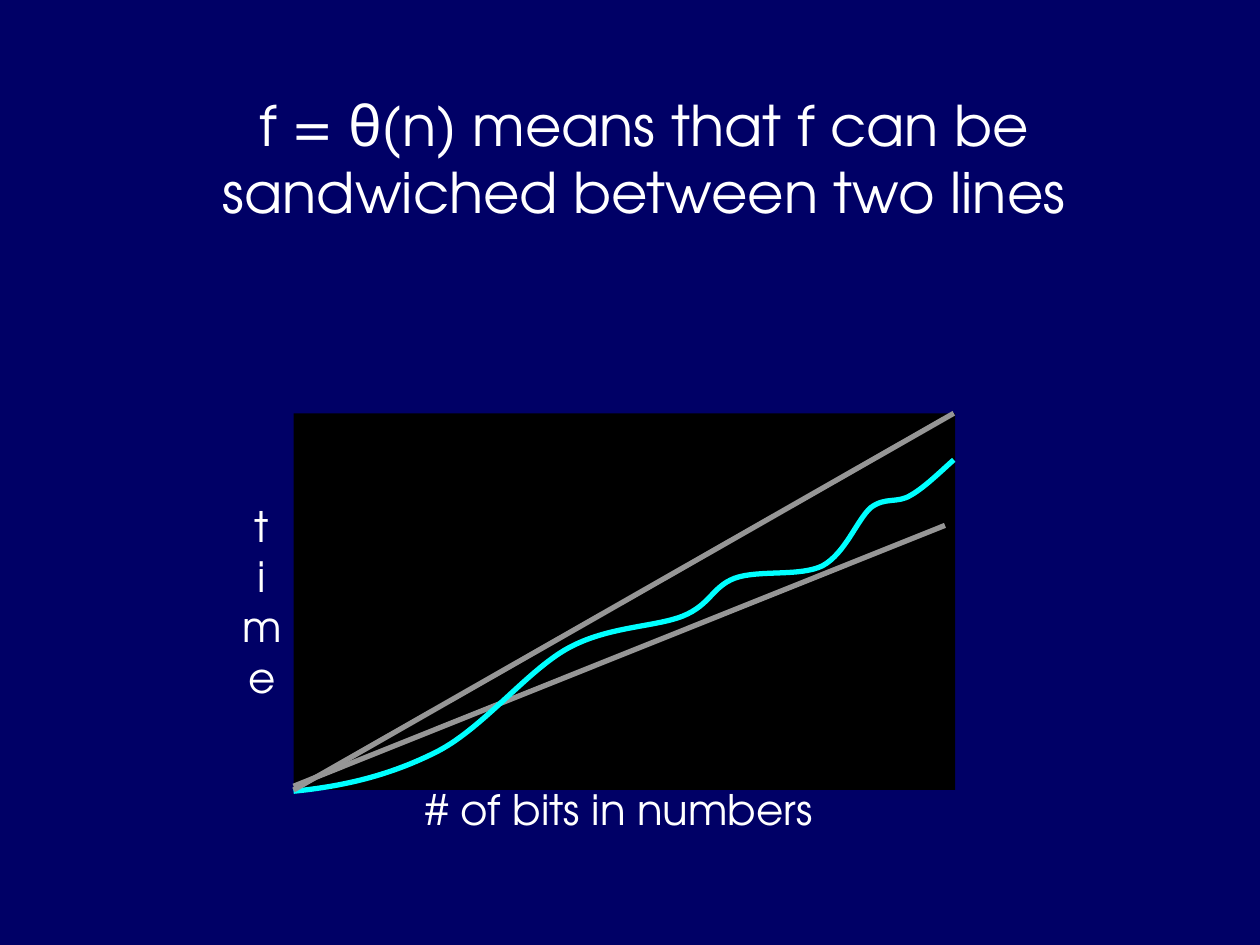
from lxml import etree
from pptx import Presentation
from pptx.dml.color import RGBColor
from pptx.enum.shapes import MSO_CONNECTOR, MSO_SHAPE
from pptx.enum.text import MSO_ANCHOR, MSO_AUTO_SIZE as AutoSize, PP_ALIGN
from pptx.oxml.ns import qn
from pptx.util import Inches, Pt

THEME = {
    "background": RGBColor(0x00, 0x00, 0x66),
    "plot": RGBColor(0x00, 0x00, 0x00),
    "text": RGBColor(0xFF, 0xFF, 0xFF),
    "bound": RGBColor(0x96, 0x96, 0x96),
    "curve": RGBColor(0x00, 0xFF, 0xFF),
    "font": "TeX Gyre Adventor",
    "symbol_font": "Comic Neue",
    "title_size": Pt(32),
    "label_size": Pt(24),
    "line_width": Pt(3),
}

# Content: boxes are left, top, width, height in inches
TITLE = [
    ("f = ", "font"),
    ("θ", "symbol_font"),
    ("(n) means that f can be sandwiched between two lines", "font"),
]
TITLE_BOX = (1.25, 0.67, 7.73, 1.42)
PLOT_BOX = (2.33, 3.28, 5.25, 2.99)
LABELS = [  # text, box, wraps
    ("# of bits in numbers", (3.24, 6.17, 3.35, 0.5), False),
    ("t\vime", (1.83, 3.92, 0.5, 1.7), True),
]
LOWER_BOUND = (7.5, 4.17, 2.33, 6.24)
UPPER_BOUND = (2.33, 6.27, 7.57, 3.28)
CURVE_START = (2.33, 6.28)
CURVE = [  # Bézier segments: two control points, then the end point
    ((2.74, 6.24), (3.11, 6.15), (3.48, 5.96)),
    ((3.84, 5.77), (4.18, 5.33), (4.5, 5.15)),
    ((4.82, 4.97), (5.19, 4.98), (5.42, 4.89)),
    ((5.64, 4.8), (5.65, 4.66), (5.83, 4.59)),
    ((6.02, 4.52), (6.35, 4.58), (6.53, 4.49)),
    ((6.71, 4.39), (6.8, 4.13), (6.91, 4.03)),
    ((7.03, 3.94), (7.12, 4), (7.23, 3.93)),
    ((7.34, 3.87), (7.5, 3.71), (7.57, 3.65)),
]


def inches(values):
    return [Inches(value) for value in values]


def style_line(shape, color):
    shape.line.color.rgb = THEME[color]
    shape.line.width = THEME["line_width"]


def style_para(para, size):
    para.alignment = PP_ALIGN.CENTER
    para.font.size = THEME[size]
    para.font.color.rgb = THEME["text"]


def add_title(page):
    title = page.shapes.title
    title.left, title.top, title.width, title.height = inches(TITLE_BOX)
    frame = title.text_frame
    frame.word_wrap = True
    frame.auto_size = AutoSize.NONE
    frame.vertical_anchor = MSO_ANCHOR.TOP
    para = frame.paragraphs[0]
    style_para(para, "title_size")
    for text, font in TITLE:
        span = para.add_run()
        span.text = text
        span.font.name = THEME[font]


def add_label(page, text, box, wraps):
    frame = page.shapes.add_textbox(*inches(box)).text_frame
    frame.word_wrap = wraps
    frame.auto_size = AutoSize.SHAPE_TO_FIT_TEXT
    para = frame.paragraphs[0]
    para.text = text
    style_para(para, "label_size")
    para.font.name = THEME["font"]


def add_plot(page):
    plot = page.shapes.add_shape(MSO_SHAPE.RECTANGLE, *inches(PLOT_BOX))
    plot.shadow.inherit = False
    plot.fill.solid()
    plot.fill.fore_color.rgb = THEME["plot"]
    plot.line.fill.background()


def add_bound(page, ends):
    bound = page.shapes.add_connector(MSO_CONNECTOR.STRAIGHT, *inches(ends))
    style_line(bound, "bound")
    etree.SubElement(bound._element.spPr, qn("a:effectLst"))


def add_curve(page):
    points = [inches(point) for segment in CURVE for point in segment]
    builder = page.shapes.build_freeform(*inches(CURVE_START))
    builder.add_line_segments(points, close=False)
    curve = builder.convert_to_shape()
    curve.shadow.inherit = False
    curve.fill.background()
    style_line(curve, "curve")
    # Merge every three straight steps into one Bézier segment
    steps = list(curve._element.iter(qn("a:lnTo")))
    for first in range(0, len(steps), 3):
        bezier = etree.Element(qn("a:cubicBezTo"))
        steps[first].addprevious(bezier)
        for step in steps[first:first + 3]:
            bezier.append(step[0])
            step.getparent().remove(step)


def main():
    deck = Presentation()
    deck.slide_width, deck.slide_height = Inches(10), Inches(7.5)
    page = deck.slides.add_slide(deck.slide_layouts[5])
    page.background.fill.solid()
    page.background.fill.fore_color.rgb = THEME["background"]

    # Plot area and axis labels
    add_title(page)
    add_plot(page)
    for label in LABELS:
        add_label(page, *label)

    # Curve between its two bounds
    add_bound(page, LOWER_BOUND)
    add_curve(page)
    add_bound(page, UPPER_BOUND)
    deck.save("out.pptx")


if __name__ == "__main__":
    main()
